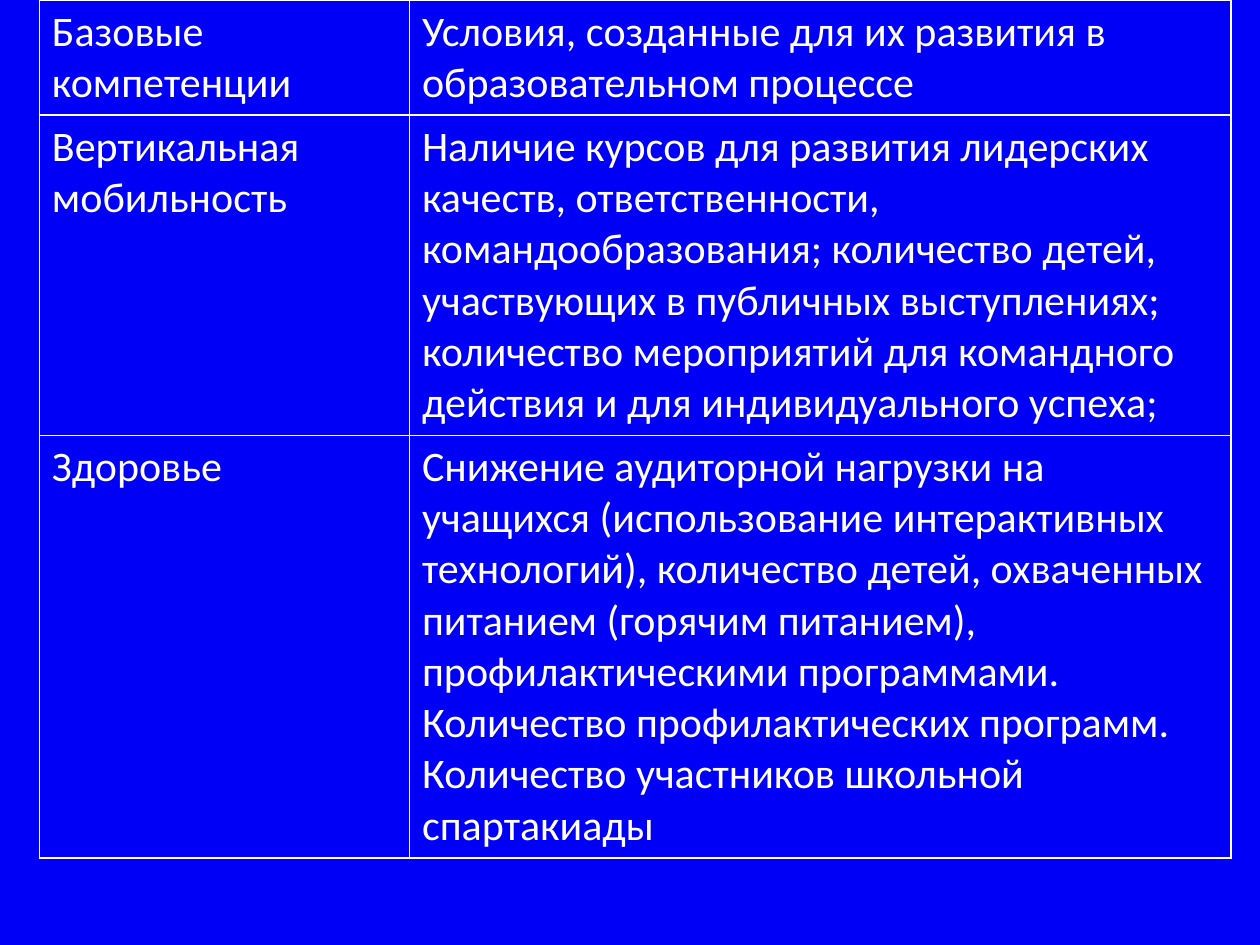
"""Build a slide with a table of core competencies and the conditions for them."""
from dataclasses import dataclass

from lxml import etree
from pptx import Presentation
from pptx.dml.color import RGBColor
from pptx.enum.text import MSO_ANCHOR, PP_ALIGN
from pptx.oxml.ns import qn
from pptx.util import Pt

LEFT = PP_ALIGN.LEFT
TOP = MSO_ANCHOR.TOP
BLANK_LAYOUT = 6
BORDER_TAGS = ("a:lnL", "a:lnR", "a:lnT", "a:lnB")


@dataclass(frozen=True)
class Theme:
    background: str = "0000F6"
    ink: str = "FFFFFF"
    font: str = "Calibri"
    text_size: float = 24
    border_width: float = 1


@dataclass(frozen=True)
class CompetencyRow:
    competency: str
    conditions: str
    height: float


THEME = Theme()
PAGE_SIZE = (720, 540)
TABLE_LEFT, TABLE_TOP = 22.5, 0
COLUMN_WIDTHS = (211.5, 469.5)
ROWS = (
    CompetencyRow(
        "Базовые компетенции",
        "Условия, созданные для их развития в образовательном процессе",
        65.5,
    ),
    CompetencyRow(
        "Вертикальная мобильность",
        "Наличие курсов для развития лидерских качеств, ответственности, "
        "командообразования; количество детей, участвующих в публичных "
        "выступлениях; количество мероприятий для командного действия и для "
        "индивидуального успеха;",
        182.5,
    ),
    CompetencyRow(
        "Здоровье",
        "Снижение аудиторной нагрузки на учащихся (использование интерактивных "
        "технологий), количество детей, охваченных питанием (горячим питанием), "
        "профилактическими программами. Количество профилактических программ. "
        "Количество участников школьной спартакиады",
        241,
    ),
)


def apply_format(target: object, values: dict) -> None:
    for name, value in values.items():
        setattr(target, name, value)


def draw_borders(cell) -> None:
    properties = cell._tc.get_or_add_tcPr()
    for position, tag in enumerate(BORDER_TAGS):
        line = etree.Element(qn(tag), w=str(Pt(THEME.border_width)))
        fill = etree.SubElement(line, qn("a:solidFill"))
        etree.SubElement(fill, qn("a:srgbClr"), val=THEME.ink)
        properties.insert(position, line)


def fill_cell(cell, text: str) -> None:
    cell.fill.background()
    cell.vertical_anchor = TOP
    para = cell.text_frame.paragraphs[0]
    para.alignment = LEFT
    span = para.add_run()
    span.text = text
    apply_format(
        span.font,
        {"name": THEME.font, "size": Pt(THEME.text_size), "bold": False},
    )
    span.font.color.rgb = RGBColor.from_string(THEME.ink)
    draw_borders(cell)


def draw_table(page, rows: tuple[CompetencyRow, ...]) -> None:
    table = page.shapes.add_table(
        len(rows),
        len(COLUMN_WIDTHS),
        Pt(TABLE_LEFT),
        Pt(TABLE_TOP),
        Pt(sum(COLUMN_WIDTHS)),
        Pt(sum(row.height for row in rows)),
    ).table
    apply_format(table, {"first_row": False, "horz_banding": False})
    for column, width in zip(table.columns, COLUMN_WIDTHS):
        column.width = Pt(width)
    for table_row, row in zip(table.rows, rows):
        table_row.height = Pt(row.height)
        for cell, text in zip(table_row.cells, (row.competency, row.conditions)):
            fill_cell(cell, text)


def main() -> None:
    deck = Presentation()
    deck.slide_width, deck.slide_height = map(Pt, PAGE_SIZE)
    page = deck.slides.add_slide(deck.slide_layouts[BLANK_LAYOUT])
    page.background.fill.solid()
    page.background.fill.fore_color.rgb = RGBColor.from_string(THEME.background)
    draw_table(page, ROWS)
    deck.save("out.pptx")


if __name__ == "__main__":
    main()
